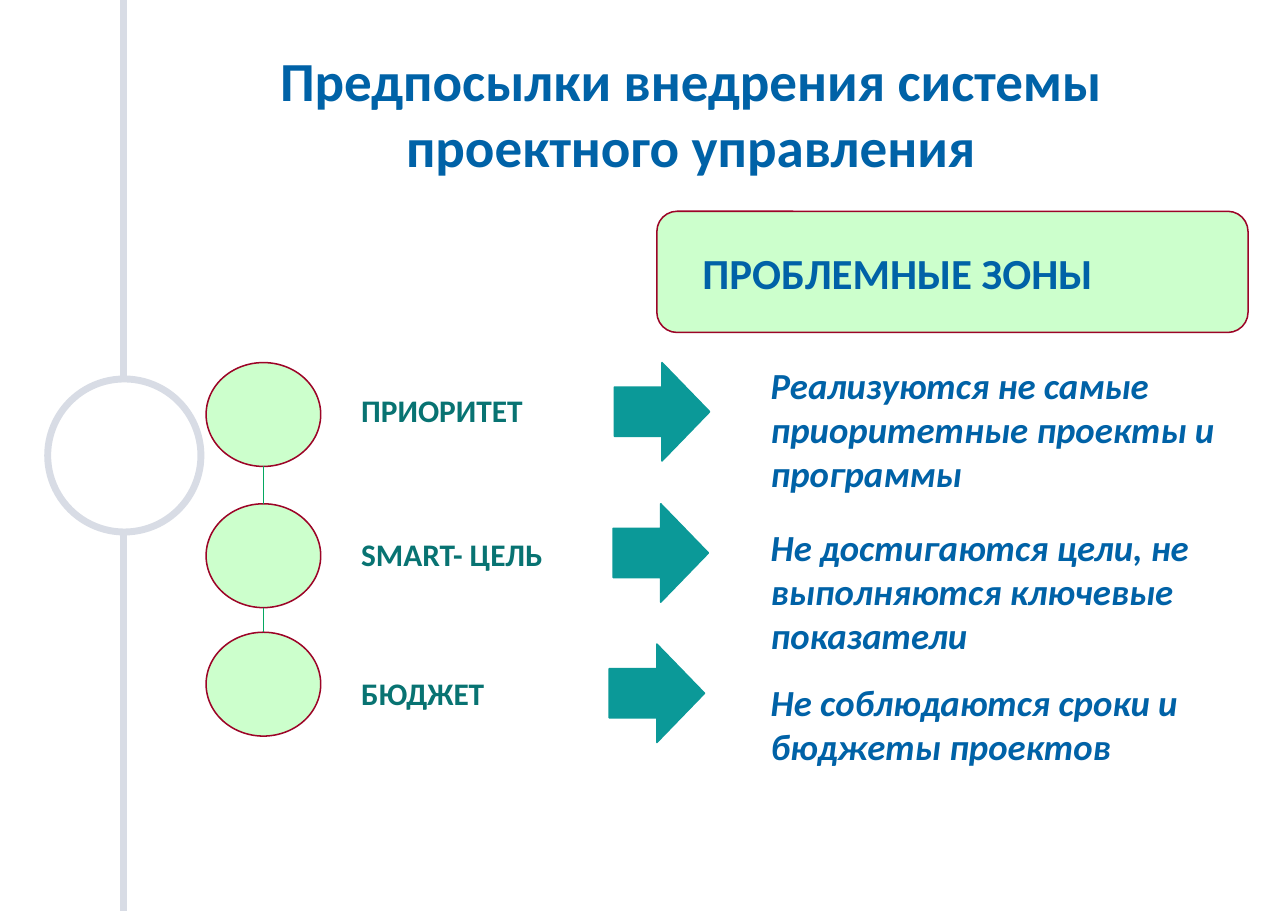
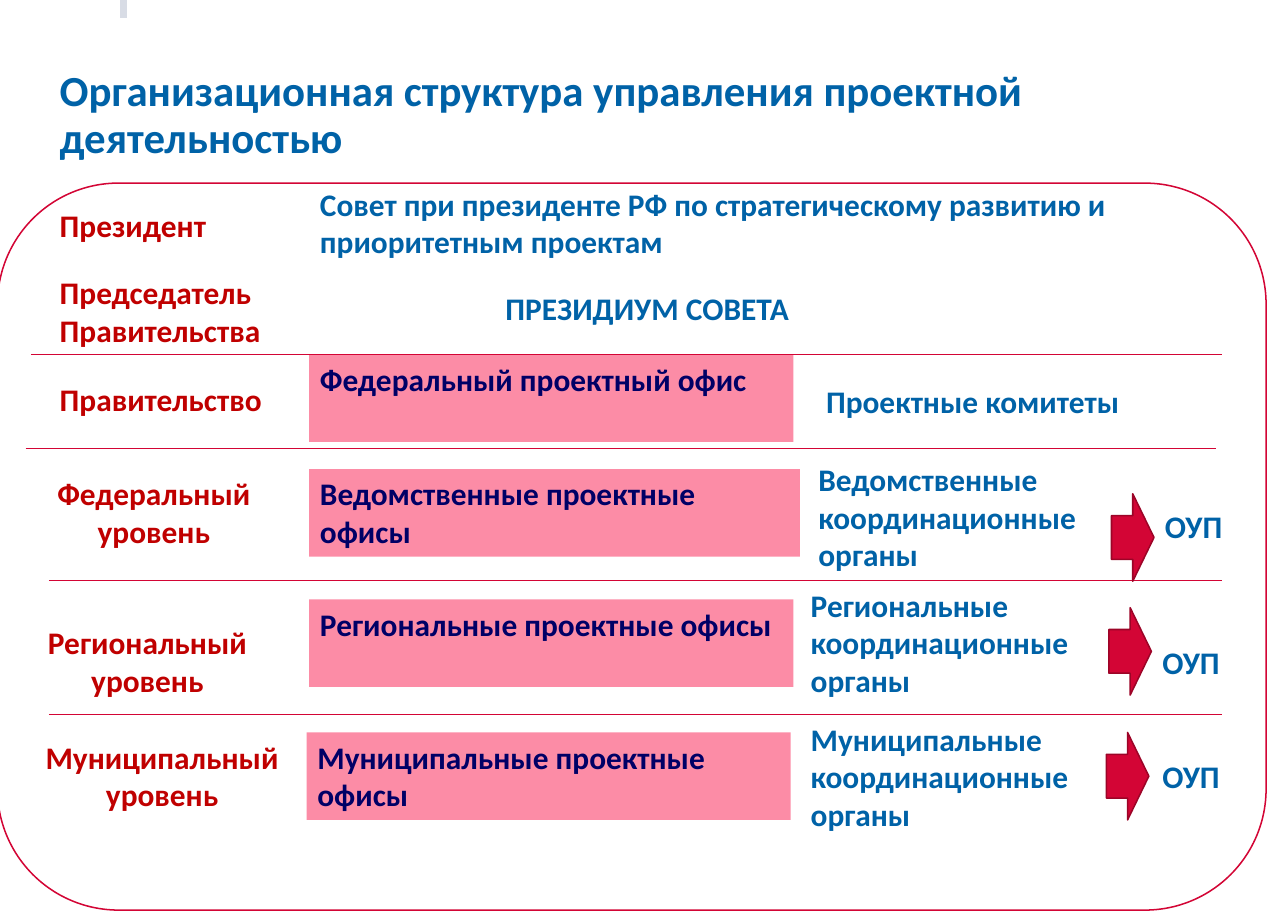
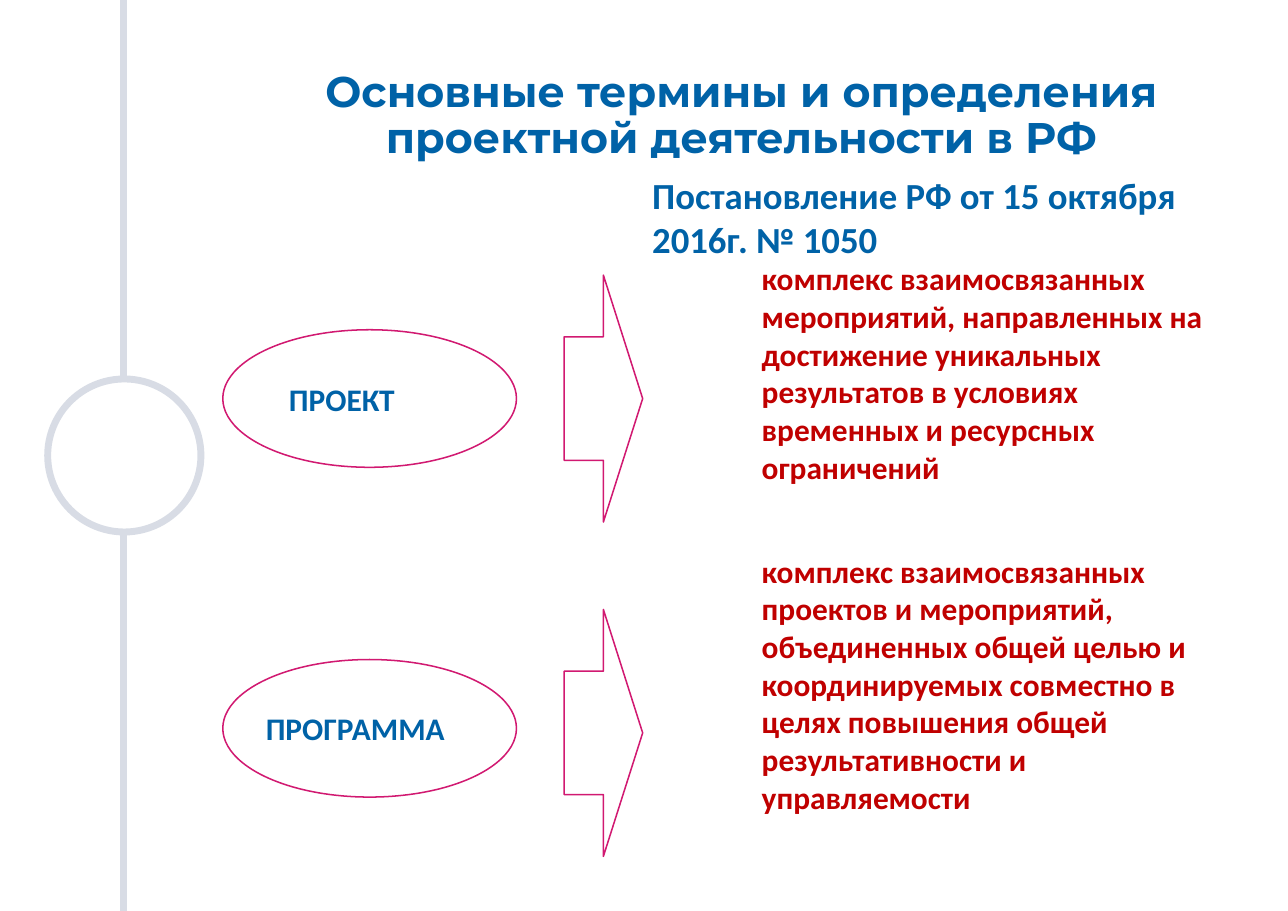
from lxml.etree import SubElement
from pptx import Presentation
from pptx.dml.color import RGBColor
from pptx.enum.shapes import MSO_CONNECTOR, MSO_SHAPE
from pptx.enum.text import MSO_ANCHOR, MSO_AUTO_SIZE, PP_ALIGN
from pptx.oxml.ns import qn
from pptx.util import Inches, Pt

WIDTH, HEIGHT = Inches(11.69), Inches(8.27)

COLORS = {
    "white": "FFFFFF", "band": "D8DCE5", "blue": "0062A7", "navy": "000066",
    "red": "C00000", "crimson": "D30535", "wine": "9C0427", "pink": "FC8CA6",
    "magenta": "D11971", "mint": "CCFFCC", "green": "04A760",
    "teal": "0B9998", "dark teal": "087372",
}
BODY_SIZE, LEAD_SIZE, HEADING_SIZE = 20.5, 24, 28
LINE_HEIGHT, TWO_LINES = 5.4, 9.6


# Helpers: places are percent of the slide's width and height
def color(name):
    return RGBColor.from_string(COLORS[name])


def across(share):
    return round(WIDTH * share / 100)


def down(share):
    return round(HEIGHT * share / 100)


def place(left, top, width, height):
    return across(left), down(top), across(width), down(height)


def write_text(shape, text, size=BODY_SIZE, ink="blue", font="Calibri", italic=False,
               align=PP_ALIGN.LEFT, anchor=MSO_ANCHOR.TOP, spacing=None,
               inset=None, left_inset=None):
    frame = shape.text_frame
    frame.word_wrap = True
    frame.vertical_anchor = anchor
    if inset is not None:
        frame.margin_left = frame.margin_right = Inches(inset)
        frame.margin_top = frame.margin_bottom = Inches(inset)
    if left_inset is not None:
        frame.margin_left = Inches(left_inset)
    paragraph = frame.paragraphs[0]
    paragraph.text = text
    paragraph.alignment = align
    if spacing:
        paragraph.line_spacing = spacing
    paragraph.font.name = font
    paragraph.font.size = Pt(size)
    paragraph.font.bold = True
    paragraph.font.italic = italic
    paragraph.font.color.rgb = color(ink)


def add_text(slide, box, text, **text_format):
    shape = slide.shapes.add_textbox(*place(*box))
    write_text(shape, text, **text_format)
    shape.text_frame.auto_size = MSO_AUTO_SIZE.SHAPE_TO_FIT_TEXT


def add_figure(slide, kind, box, fill, outline=None, weight=1):
    shape = slide.shapes.add_shape(kind, *place(*box))
    shape.shadow.inherit = False
    shape.fill.solid()
    shape.fill.fore_color.rgb = color(fill)
    if outline:
        shape.line.color.rgb = color(outline)
        shape.line.width = Pt(weight)
    else:
        shape.line.fill.background()
    return shape


def add_line(slide, start, end, ink, weight=0.5):
    line = slide.shapes.add_connector(
        MSO_CONNECTOR.STRAIGHT, across(start[0]), down(start[1]), across(end[0]), down(end[1]))
    line.line.color.rgb = color(ink)
    line.line.width = Pt(weight)
    SubElement(line._element.spPr, qn("a:effectLst"))


def start_slide(presentation, ring=True):
    """Blank slide with the vertical band and, if wanted, its ring."""
    slide = presentation.slides.add_slide(presentation.slide_layouts[6])
    add_line(slide, (9.6, 100), (9.6, 0), "band", 4.5)
    if ring:
        add_figure(slide, MSO_SHAPE.OVAL, (3.7, 41.6, 11.9, 16.8), "white", "band", 4.5)
    return slide


def build_prerequisites(presentation):
    slide = start_slide(presentation)
    add_text(slide, (13.9, 4.5, 79.5, 15.8),
             "Предпосылки внедрения системы проектного управления",
             size=36, align=PP_ALIGN.CENTER)
    zones = add_figure(slide, MSO_SHAPE.ROUNDED_RECTANGLE, (51, 23.2, 45.9, 13.3), "mint", "wine")
    write_text(zones, "ПРОБЛЕМНЫЕ ЗОНЫ", size=HEADING_SIZE,
               anchor=MSO_ANCHOR.MIDDLE, left_inset=0.36)

    # Chain of circles, each with a topic, an arrow and a problem
    circle_left, circle_width, circle_height = 16, 8.9, 11.4
    rows = [
        (39.8, "ПРИОРИТЕТ", 42.4, (47.7, 39.8),
         "Реализуются не самые приоритетные проекты и программы", 39.2, 15.8),
        (55.3, "SMART- ЦЕЛЬ", 58.2, (47.6, 55.3),
         "Не достигаются цели, не выполняются ключевые показатели", 57, 15.8),
        (69.4, "БЮДЖЕТ", 73.4, (47.3, 70.7),
         "Не соблюдаются сроки и бюджеты проектов", 74, 11),
    ]
    for circle_top, topic, topic_top, arrow, problem, problem_top, problem_height in rows:
        add_figure(slide, MSO_SHAPE.OVAL,
                   (circle_left, circle_top, circle_width, circle_height), "mint", "wine")
        add_text(slide, (27.2, topic_top, 21.5, LINE_HEIGHT), topic, ink="dark teal")
        add_figure(slide, MSO_SHAPE.RIGHT_ARROW, (*arrow, 7.4, 10.8), "teal", "teal")
        add_text(slide, (59, problem_top, 39.1, problem_height), problem,
                 size=LEAD_SIZE, italic=True)
    middle = circle_left + circle_width / 2
    for upper, lower in zip(rows, rows[1:]):
        add_line(slide, (middle, upper[0] + circle_height), (middle, lower[0]), "green")


def build_structure(presentation):
    slide = start_slide(presentation, ring=False)
    title = add_figure(slide, MSO_SHAPE.RECTANGLE, (3.8, 2.1, 93.8, 21.3), "white", "white")
    write_text(title, "Организационная структура управления проектной деятельностью",
               size=HEADING_SIZE, anchor=MSO_ANCHOR.MIDDLE, spacing=0.9)
    add_figure(slide, MSO_SHAPE.ROUNDED_RECTANGLE, (-0.2, 20.1, 98.5, 79.8), "white", "crimson")

    # Who is in charge
    for top, height, role in [(22, LINE_HEIGHT, "Президент"),
                              (29.4, TWO_LINES, "Председатель Правительства"),
                              (41.1, LINE_HEIGHT, "Правительство")]:
        add_text(slide, (3.8, top, 21.5, height), role, ink="red")
    for left, top, width, level in [(2.4, 51.5, 19.1, "Федеральный уровень"),
                                    (1.5, 67.8, 19.9, "Региональный уровень"),
                                    (1.5, 80.4, 22.2, "Муниципальный уровень")]:
        add_text(slide, (left, top, width, TWO_LINES), level, ink="red", align=PP_ALIGN.CENTER)

    # Council and committees
    add_text(slide, (24, 19.7, 69.2, TWO_LINES),
             "Совет при президенте РФ по стратегическому развитию и приоритетным проектам")
    add_text(slide, (38.4, 31.1, 37.5, LINE_HEIGHT), "ПРЕЗИДИУМ СОВЕТА")
    add_text(slide, (63.3, 41.4, 29.9, LINE_HEIGHT), "Проектные комитеты")

    # Project offices
    for left, top, width, office in [(24, 38.9, 37.6, "Федеральный проектный офис"),
                                     (24, 51.5, 38.1, "Ведомственные проектные офисы"),
                                     (24, 65.8, 37.6, "Региональные проектные офисы"),
                                     (23.8, 80.4, 37.6, "Муниципальные проектные офисы")]:
        shape = add_figure(slide, MSO_SHAPE.RECTANGLE, (left, top, width, TWO_LINES), "pink")
        write_text(shape, office, ink="navy")

    # Rules between the levels
    for left, right, top in [(2.4, 94.9, 38.9), (2, 94.4, 49.2),
                             (3.8, 94.9, 63.7), (3.8, 94.9, 78.4)]:
        add_line(slide, (left, top), (right, top), "crimson")

    # Coordinating bodies, each leading to its unit
    for kind, body, arrow, unit in [
            ("Ведомственные", (62.7, 49.9), (86.3, 54.2), (89.6, 55.1)),
            ("Региональные", (62.1, 63.7), (86.1, 66.7), (89.4, 70)),
            ("Муниципальные", (62.1, 78.4), (85.9, 80.4), (89.4, 82.5))]:
        add_text(slide, (*body, 25.7, 13.8), f"{kind} координационные органы")
        add_figure(slide, MSO_SHAPE.RIGHT_ARROW, (*arrow, 3.3, TWO_LINES), "crimson", "wine")
        add_text(slide, (*unit, 7.6, LINE_HEIGHT), "ОУП")


def build_terms(presentation):
    slide = start_slide(presentation)
    add_text(slide, (15.1, 7.1, 84.9, 11.4),
             "Основные термины и определения проектной деятельности в РФ",
             size=HEADING_SIZE, font="Montserrat", align=PP_ALIGN.CENTER,
             anchor=MSO_ANCHOR.MIDDLE, spacing=0.9, inset=0.05)
    add_text(slide, (49.8, 18.4, 50.2, 11),
             "Постановление РФ от 15 октября 2016г. № 1050", size=LEAD_SIZE)

    # Term, arrow, definition
    for term, term_inset, oval_top, arrow_top, text_top, text_height, definition in [
            ("ПРОЕКТ", 0.21, 36.2, 30.2, 27.9, 26.4,
             "комплекс взаимосвязанных мероприятий, направленных на достижение уникальных "
             "результатов в условиях временных и ресурсных ограничений"),
            ("ПРОГРАММА", 0, 72.4, 66.9, 60, 34.7,
             "комплекс взаимосвязанных проектов и мероприятий, объединенных общей целью и "
             "координируемых совместно в целях повышения общей результативности и "
             "управляемости")]:
        oval = add_figure(slide, MSO_SHAPE.OVAL, (17.3, oval_top, 22.8, 15.1), "white", "magenta")
        write_text(oval, term, anchor=MSO_ANCHOR.MIDDLE, left_inset=term_inset)
        add_figure(slide, MSO_SHAPE.RIGHT_ARROW, (43.8, arrow_top, 6.1, 27.1), "white", "magenta")
        add_text(slide, (58.3, text_top, 37.4, text_height), definition, ink="red")


def main():
    presentation = Presentation()
    presentation.slide_width, presentation.slide_height = WIDTH, HEIGHT
    build_prerequisites(presentation)
    build_structure(presentation)
    build_terms(presentation)
    presentation.save("out.pptx")


if __name__ == "__main__":
    main()
